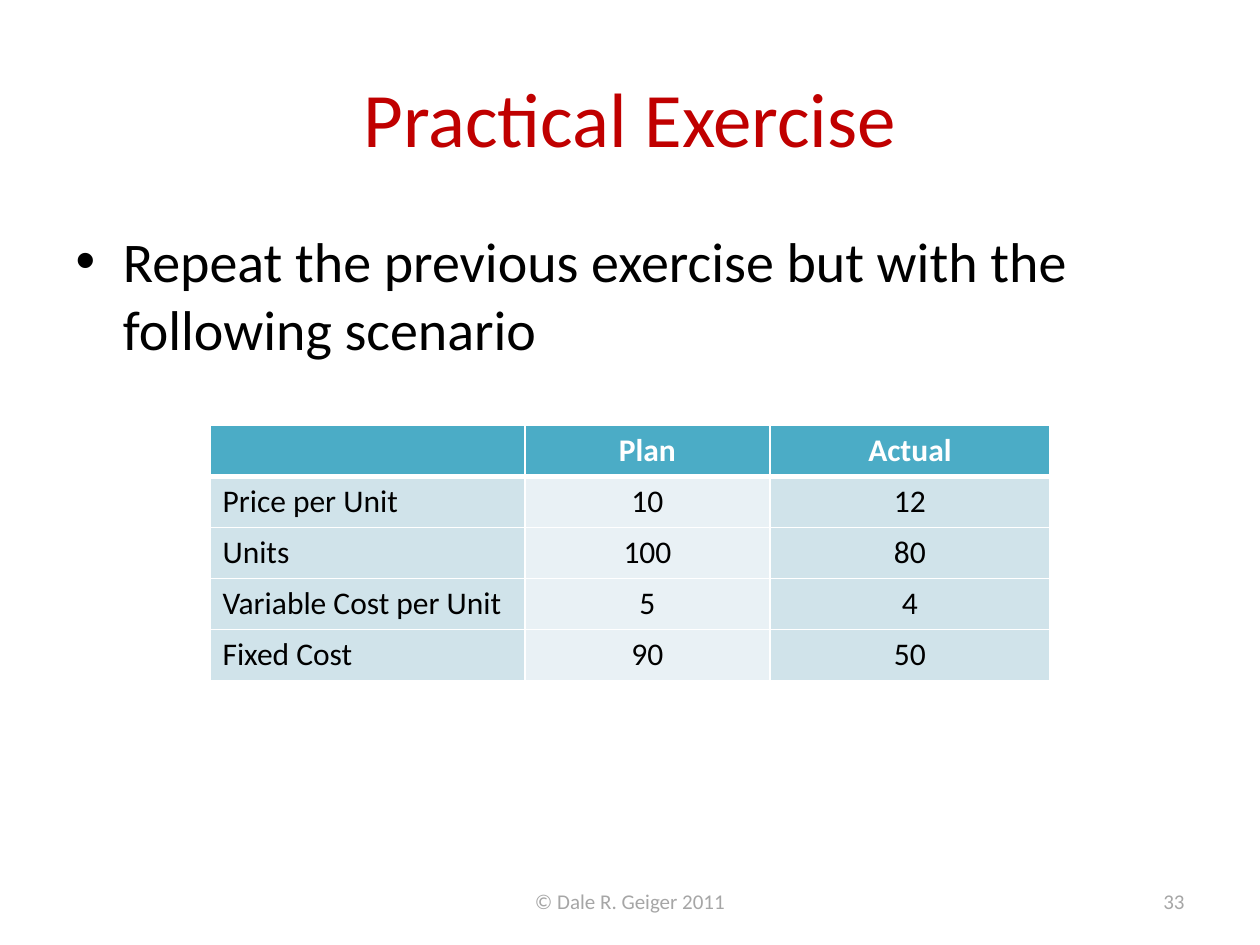
from lxml import etree
from pptx import Presentation
from pptx.dml.color import RGBColor
from pptx.enum.text import MSO_ANCHOR, PP_ALIGN
from pptx.oxml.ns import qn
from pptx.util import Pt

LEFT, CENTER, RIGHT = PP_ALIGN.LEFT, PP_ALIGN.CENTER, PP_ALIGN.RIGHT
MIDDLE = MSO_ANCHOR.MIDDLE

WHITE = RGBColor(0xFF, 0xFF, 0xFF)
BLACK = RGBColor(0x00, 0x00, 0x00)
RED = RGBColor(0xC0, 0x00, 0x00)
GRAY = RGBColor(0xA6, 0xA6, 0xA6)
TEAL = RGBColor(0x4B, 0xAC, 0xC6)
BAND_DARK = RGBColor(0xD0, 0xE3, 0xEA)
BAND_LIGHT = RGBColor(0xE9, 0xF1, 0xF5)

SCENARIO = [
    ("", "Plan", "Actual"),
    ("Price per Unit", "10", "12"),
    ("Units", "100", "80"),
    ("Variable Cost per Unit", "5", "4"),
    ("Fixed Cost", "90", "50"),
]


class SlideBuilder:
    font_name = "Calibri"

    def __init__(self, slide):
        self.slide = slide

    def set_text(self, frame, text, size, color, align, bold=False):
        frame.word_wrap = True
        paragraph = frame.paragraphs[0]
        paragraph.alignment = align
        paragraph.text = text
        style = {"name": self.font_name, "size": Pt(size), "bold": bold}
        for run in paragraph.runs:
            for attribute, value in style.items():
                setattr(run.font, attribute, value)
            run.font.color.rgb = color

    def placeholder(self, index, box, text, size, color, align):
        holder = self.slide.placeholders[index]
        for side, length in zip(("left", "top", "width", "height"), box):
            setattr(holder, side, Pt(length))
        self.set_text(holder.text_frame, text, size, color, align)

    def footer(self, left, width, text, align):
        box = self.slide.shapes.add_textbox(Pt(left), Pt(500.5), Pt(width), Pt(28.75))
        box.text_frame.vertical_anchor = MIDDLE
        self.set_text(box.text_frame, text, 12, GRAY, align)

    def cell_borders(self, cell, top, bottom):
        properties = cell._tc.get_or_add_tcPr()
        widths = {"lnL": 1, "lnR": 1, "lnT": top, "lnB": bottom}
        for position, (tag, width) in enumerate(widths.items()):
            line = etree.Element(qn(f"a:{tag}"), w=str(Pt(width)))
            fill = etree.SubElement(line, qn("a:solidFill"))
            etree.SubElement(fill, qn("a:srgbClr"), val=str(WHITE))
            properties.insert(position, line)

    def table(self, left, top, column_widths, row_height, rows):
        """Draw a table with a header row and columns in alternating tints."""
        table = self.slide.shapes.add_table(
            len(rows), len(column_widths), Pt(left), Pt(top),
            Pt(sum(column_widths)), Pt(row_height * len(rows))).table
        for column, width in zip(table.columns, column_widths):
            column.width = Pt(width)
        for r, values in enumerate(rows):
            table.rows[r].height = Pt(row_height)
            header = r == 0
            for c, value in enumerate(values):
                cell = table.cell(r, c)
                band = BAND_LIGHT if c % 2 else BAND_DARK
                cell.fill.solid()
                cell.fill.fore_color.rgb = TEAL if header else band
                self.cell_borders(cell, top=3 if r == 1 else 1, bottom=3 if header else 1)
                self.set_text(cell.text_frame, value, 18, WHITE if header else BLACK,
                              CENTER if c else LEFT, bold=header)


def main():
    presentation = Presentation()
    presentation.slide_width, presentation.slide_height = Pt(720), Pt(540)
    layout = presentation.slide_layouts.get_by_name("Title and Content")
    builder = SlideBuilder(presentation.slides.add_slide(layout))

    builder.placeholder(0, (36, 21.6, 648, 90), "Practical Exercise", 44, RED, CENTER)
    builder.placeholder(1, (36, 126, 648, 356.4),
                        "Repeat the previous exercise but with the following scenario",
                        32, BLACK, LEFT)
    builder.table(120, 243, (180, 140, 160), 29.2, SCENARIO)
    builder.footer(246, 228, "© Dale R. Geiger 2011", CENTER)
    builder.footer(516, 168, "33", RIGHT)

    presentation.save("out.pptx")


if __name__ == "__main__":
    main()
